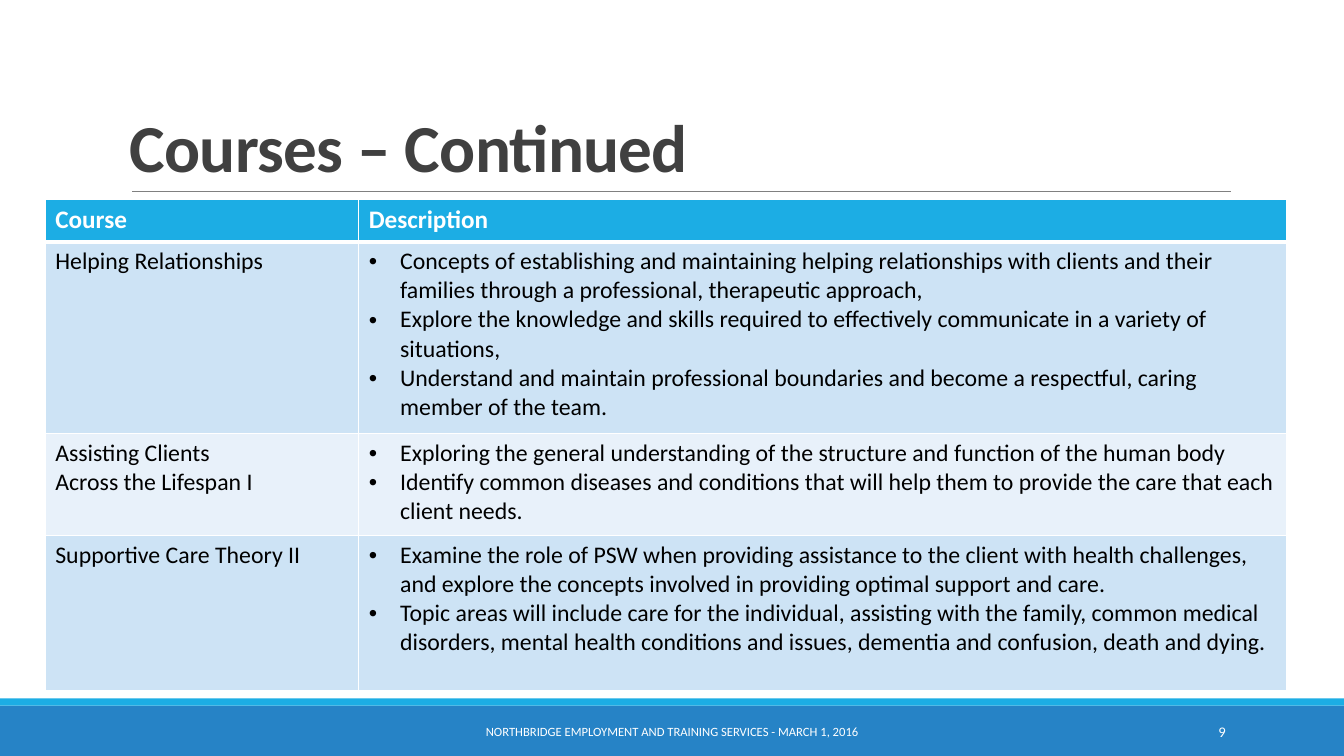
import pptx
import pptx.dml.color
import pptx.enum.shapes
import pptx.enum.text
import pptx.oxml
import pptx.oxml.ns
import pptx.util

Cm = pptx.util.Cm
Pt = pptx.util.Pt
RGBColor = pptx.dml.color.RGBColor
ALIGN = pptx.enum.text.PP_ALIGN
ANCHOR = pptx.enum.text.MSO_ANCHOR

WHITE = RGBColor(0xFF, 0xFF, 0xFF)
BLACK = RGBColor(0, 0, 0)
CHARCOAL = RGBColor(0x40, 0x40, 0x40)
GRAY = RGBColor(0x80, 0x80, 0x80)
CYAN = RGBColor(0x1C, 0xAD, 0xE4)
BLUE = RGBColor(0x26, 0x83, 0xC6)
BAND_DARK = RGBColor(0xCD, 0xE3, 0xF5)
BAND_LIGHT = RGBColor(0xE8, 0xF1, 0xFA)

PAGE_WIDTH, PAGE_HEIGHT = 33.87, 19.05
COLUMN_WIDTHS = (7.9, 23.39)
ROW_HEIGHTS = (1.07, 4.83, 2.57, 3.91)
BULLET_INDENT = Cm(0.79)

TITLE_FONT = {"name": "Calibri", "size": Pt(48), "bold": True}
HEADER_FONT = {"name": "Calibri", "size": Pt(18), "bold": True}
BODY_FONT = {"name": "Calibri", "size": Pt(17), "bold": False}
NUMBER_FONT = {"name": "Calibri", "size": Pt(10.5)}
FOOTER_FONT = {"name": "Calibri", "size": Pt(9)}

COURSES = [
    (["Helping Relationships"], [
        "Concepts of establishing and maintaining helping relationships with clients and their families through a professional, therapeutic approach,",
        "Explore the knowledge and skills required to effectively communicate in a variety of situations,",
        "Understand and maintain professional boundaries and become a respectful, caring member of the team.",
    ]),
    (["Assisting Clients", "Across the Lifespan I"], [
        "Exploring the general understanding of the structure and function of the human body",
        "Identify common diseases and conditions that will help them to provide the care that each client needs.",
    ]),
    (["Supportive Care Theory II"], [
        "Examine the role of PSW when providing assistance to the client with health challenges, and explore the concepts involved in providing optimal support and care.",
        "Topic areas will include care for the individual, assisting with the family, common medical disorders, mental health conditions and issues, dementia and confusion, death and dying.",
    ]),
]


def add_span(para, text, font_values, color):
    span = para.add_run()
    span.text = text
    for name, value in font_values.items():
        setattr(span.font, name, value)
    span.font.color.rgb = color
    return span


def add_text(page, box, text, font_values, color, align, anchor):
    frame = page.shapes.add_textbox(*map(Cm, box)).text_frame
    frame.word_wrap = True
    frame.vertical_anchor = anchor
    para = frame.paragraphs[0]
    para.alignment = align
    return para, add_span(para, text, font_values, color)


def add_bar(page, box, color):
    bar = page.shapes.add_shape(
        pptx.enum.shapes.MSO_SHAPE.RECTANGLE, *map(Cm, box))
    bar.shadow.inherit = False
    bar.fill.solid()
    bar.fill.fore_color.rgb = color
    bar.line.fill.background()


def add_title(page, box):
    left, top, width, height = box
    para, span = add_text(page, box, "Courses – Continued", TITLE_FONT,
                          CHARCOAL, ALIGN.LEFT, ANCHOR.BOTTOM)
    para.line_spacing = 0.85
    span.font._element.set("spc", "-50")
    rule_left, rule_y = Cm(left + 0.31), Cm(top + height)
    rule = page.shapes.add_connector(
        pptx.enum.shapes.MSO_CONNECTOR.STRAIGHT,
        rule_left, rule_y, rule_left + Cm(27.68), rule_y)
    rule.line.color.rgb = GRAY
    rule.line.width = Pt(0.5)
    properties = rule._element.spPr
    properties.append(properties.makeelement(
        pptx.oxml.ns.qn("a:effectLst"), {}))


def set_borders(cell, widths):
    properties = cell._tc.get_or_add_tcPr()
    for index, (side, width) in enumerate(widths.items()):
        properties.insert(index, pptx.oxml.parse_xml(
            f'<a:ln{side} {pptx.oxml.ns.nsdecls("a")} w="{Pt(width)}">'
            f'<a:solidFill><a:srgbClr val="{WHITE}"/></a:solidFill>'
            f'</a:ln{side}>'))


def add_bullet(para):
    properties = para._p.get_or_add_pPr()
    properties.set("marL", str(BULLET_INDENT))
    properties.set("indent", str(-BULLET_INDENT))
    for tag, name, value in (("a:buFont", "typeface", "Arial"),
                             ("a:buChar", "char", "•")):
        properties.append(properties.makeelement(
            pptx.oxml.ns.qn(tag), {name: value}))


def fill_cell(cell, lines, font_values, color, fill, bulleted):
    cell.fill.solid()
    cell.fill.fore_color.rgb = fill
    frame = cell.text_frame
    for index, line in enumerate(lines):
        para = frame.add_paragraph() if index else frame.paragraphs[0]
        if bulleted:
            add_bullet(para)
        add_span(para, line, font_values, color)


def add_courses(page, box):
    rows = [(["Course"], ["Description"])] + COURSES
    table = page.shapes.add_table(
        len(rows), len(COLUMN_WIDTHS), *map(Cm, box)).table
    table.first_row = False
    table.horz_banding = False
    for column, width in zip(table.columns, COLUMN_WIDTHS):
        column.width = Cm(width)
    for row, height in zip(table.rows, ROW_HEIGHTS):
        row.height = Cm(height)
    for row_index, row in enumerate(rows):
        header = row_index == 0
        band = BAND_DARK if row_index % 2 else BAND_LIGHT
        for column_index, lines in enumerate(row):
            cell = table.cell(row_index, column_index)
            fill_cell(cell, lines,
                      HEADER_FONT if header else BODY_FONT,
                      WHITE if header else BLACK,
                      CYAN if header else band,
                      not header and column_index == 1)
            set_borders(cell, {"L": 1, "R": 1,
                               "T": 3 if row_index == 1 else 1,
                               "B": 3 if header else 1})


def add_footer(page, box):
    left, top, width, height = box
    strip = 0.18
    add_bar(page, (left, top + strip, width, height - strip), BLUE)
    add_bar(page, (left, top, width, strip), CYAN)
    text_top, text_height = top + 0.33, 1.02
    add_text(page, (left + 27.51, text_top, 3.63, text_height), "9",
             NUMBER_FONT, WHITE, ALIGN.RIGHT, ANCHOR.MIDDLE)
    add_text(page, (left + 10.24, text_top, 13.39, text_height),
             "NORTHBRIDGE EMPLOYMENT AND TRAINING SERVICES - MARCH 1, 2016",
             FOOTER_FONT, WHITE, ALIGN.CENTER, ANCHOR.MIDDLE)


def main():
    deck = pptx.Presentation()
    deck.slide_width, deck.slide_height = Cm(PAGE_WIDTH), Cm(PAGE_HEIGHT)
    page = deck.slides.add_slide(deck.slide_layouts[6])
    add_footer(page, (0, 17.6, PAGE_WIDTH, 1.45))
    add_title(page, (3.02, 0.79, 27.94, 4.04))
    add_courses(page, (1.14, 5.03, sum(COLUMN_WIDTHS), sum(ROW_HEIGHTS)))
    deck.save("out.pptx")


if __name__ == "__main__":
    main()
